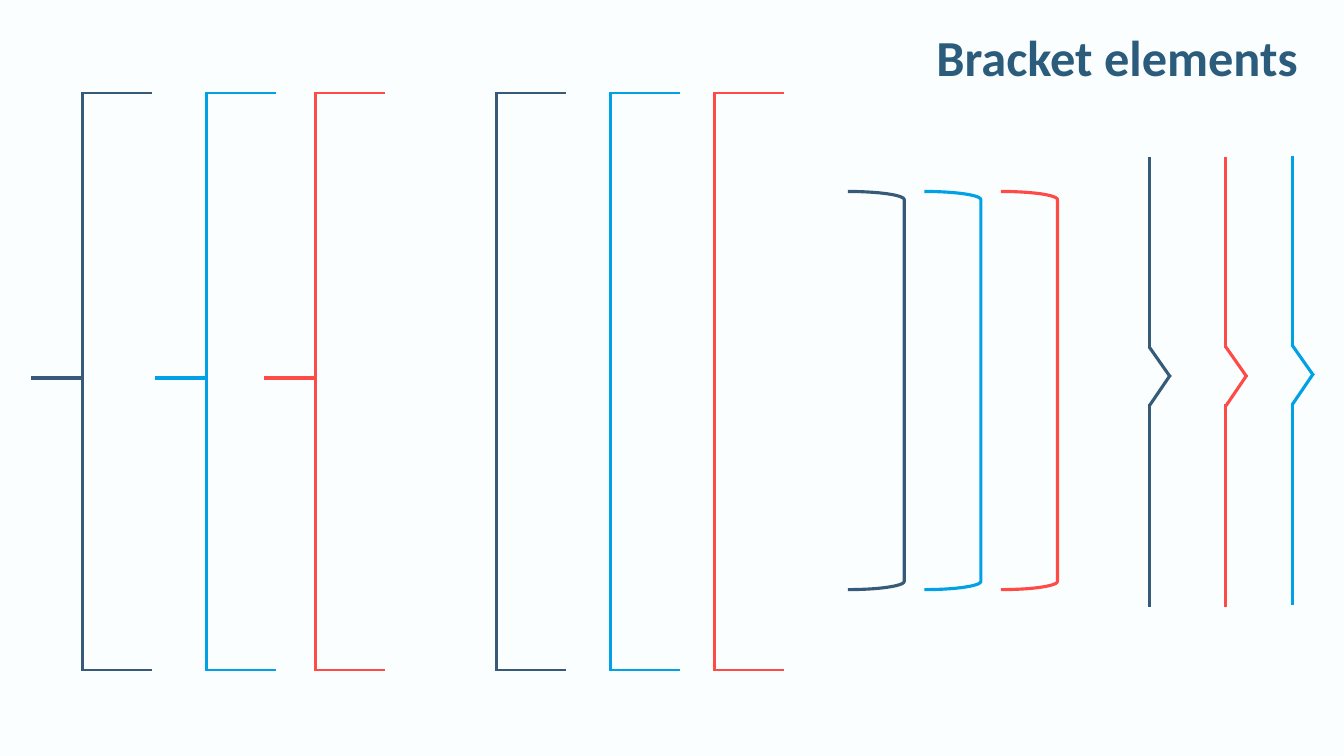
from pptx import Presentation
from pptx.dml.color import RGBColor
from pptx.enum.shapes import MSO_CONNECTOR as CONN, MSO_SHAPE as SHAPE
from pptx.enum.text import MSO_AUTO_SIZE as AUTO
from pptx.oxml.ns import qn
from pptx.util import Inches, Pt
from lxml import etree

BACKGROUND = RGBColor(0xFB, 0xFE, 0xFF)
TITLE = RGBColor(0x2B, 0x5C, 0x7C)
NAVY = RGBColor(0x37, 0x5A, 0x79)
BLUE = RGBColor(0x00, 0xA2, 0xE5)
RED = RGBColor(0xFE, 0x4B, 0x45)

THICK, THIN = 2.25, 1.5
TOP, MIDDLE, BOTTOM = 12.27, 50, 88.67  # heights of the square brackets


class BracketSlide:
    """Draws on one slide; all lengths are percent of its width or height."""

    font = "Calibri"

    def __init__(self, prs):
        self.width, self.height = prs.slide_width, prs.slide_height
        self.s = prs.slides.add_slide(prs.slide_layouts[6])
        fill = self.s.background.fill
        fill.solid()
        fill.fore_color.rgb = BACKGROUND

    def x(self, share):
        return round(self.width * share / 100)

    def y(self, share):
        return round(self.height * share / 100)

    def box(self, left, top, width, height):
        return self.x(left), self.y(top), self.x(width), self.y(height)

    def title(self, text, *box):
        tf = self.s.shapes.add_textbox(*self.box(*box)).text_frame
        tf.word_wrap = False
        tf.auto_size = AUTO.SHAPE_TO_FIT_TEXT
        p = tf.paragraphs[0]
        p.text = text
        p.font.name, p.font.size, p.font.bold = self.font, Pt(36), True
        p.font.color.rgb = TITLE

    def line(self, group, color, x1, y1, x2, y2, weight=THICK):
        c = group.shapes.add_connector(
            CONN.STRAIGHT, self.x(x1), self.y(y1), self.x(x2), self.y(y2))
        c.line.color.rgb = color
        c.line.width = Pt(weight)
        etree.SubElement(c._element.spPr, qn("a:effectLst"))

    def square_bracket(self, color, spine, stem=False):
        group = self.s.shapes.add_group_shape()
        if stem:
            self.line(group, color, spine - 3.83, MIDDLE, spine, MIDDLE)
        self.line(group, color, spine, TOP, spine, BOTTOM)
        for y in (TOP, BOTTOM):
            self.line(group, color, spine - 0.12, y, spine + 5.18, y, THIN)

    def round_bracket(self, color, left):
        sp = self.s.shapes.add_shape(
            SHAPE.RIGHT_BRACKET, *self.box(left, 25.33, 4.2, 52.67))
        sp.adjustments[0] = 0.145
        sp.shadow.inherit = False
        sp.fill.background()
        sp.line.color.rgb = color
        sp.line.width = Pt(THICK)

    def pointed_bracket(self, color, spine, shift=0):
        group = self.s.shapes.add_group_shape()
        tip = spine + 1.58
        for x1, y1, x2, y2 in (
            (spine, 20.8, spine, 46),
            (spine, 53.47, spine, 80.27),
            (spine, 45.87, tip, 49.87),
            (spine, 53.73, tip, 49.6),
        ):
            self.line(group, color, x1, y1 + shift, x2, y2 + shift)


def main():
    prs = Presentation()
    prs.slide_width, prs.slide_height = Inches(13.33), Inches(7.5)
    slide = BracketSlide(prs)

    slide.title("Bracket elements", 68.93, 2.8, 28.73, 9.47)
    slide.pointed_bracket(BLUE, 96.15, shift=-0.2)
    slide.pointed_bracket(RED, 91.2)
    slide.pointed_bracket(NAVY, 85.5)
    for i, color in enumerate((NAVY, BLUE, RED)):
        slide.round_bracket(color, 63.08 + 5.7 * i)
    for color, stemmed, plain in (
        (RED, 23.48, 53.18),
        (BLUE, 15.38, 45.45),
        (NAVY, 6.15, 36.92),
    ):
        slide.square_bracket(color, stemmed, stem=True)
        slide.square_bracket(color, plain)

    prs.save("out.pptx")


if __name__ == "__main__":
    main()
